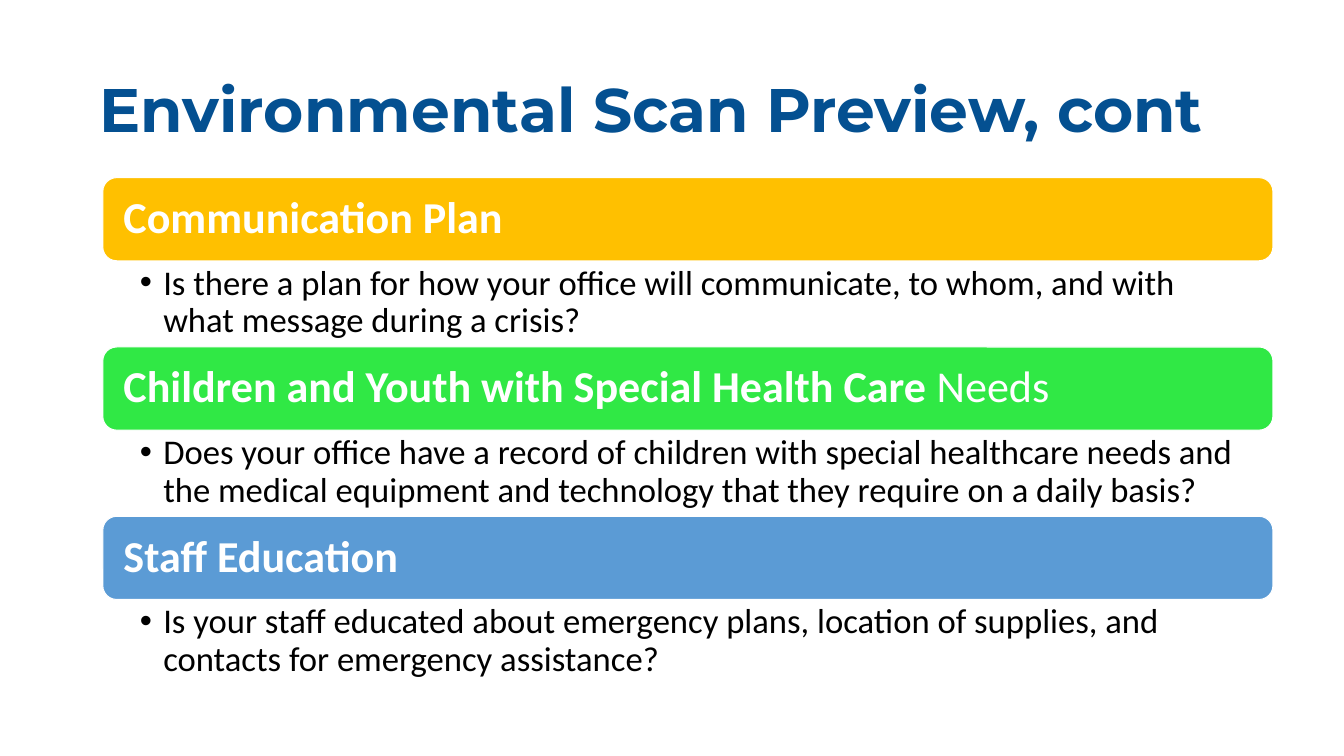
from lxml import etree
from pptx import Presentation
from pptx.dml.color import RGBColor
from pptx.enum.shapes import MSO_SHAPE
from pptx.enum.text import MSO_ANCHOR, PP_ALIGN
from pptx.oxml.ns import qn
from pptx.util import Pt

PX = 9144  # EMU per px, 100 px to the inch
ROUND = MSO_SHAPE.ROUNDED_RECTANGLE
MIDDLE, TOP = MSO_ANCHOR.MIDDLE, MSO_ANCHOR.TOP
LEFT = PP_ALIGN.LEFT

WHITE = RGBColor(0xFF, 0xFF, 0xFF)
BLACK = RGBColor(0x00, 0x00, 0x00)
NAVY = RGBColor(0x04, 0x50, 0x91)
GOLD = RGBColor(0xFF, 0xC0, 0x00)
GREEN = RGBColor(0x30, 0xE8, 0x45)
BLUE = RGBColor(0x5B, 0x9B, 0xD5)

EDGE, WIDE = 136, 1548
START, BAR_H, BODY_H = 235, 110, 114

TOPICS = [
    (GOLD, [("Communication Plan", True)],
     "Is there a plan for how your office will communicate, to whom, "
     "and with what message during a crisis?"),
    (GREEN, [("Children and Youth with Special Health Care ", True),
             ("Needs", False)],
     "Does your office have a record of children with special healthcare "
     "needs and the medical equipment and technology that they require "
     "on a daily basis?"),
    (BLUE, [("Staff Education", True)],
     "Is your staff educated about emergency plans, location of supplies, "
     "and contacts for emergency assistance?"),
]


class Deck:
    head_font = "Montserrat"
    body_font = "Calibri"

    def __init__(self, wide, high):
        self.prs = Presentation()
        self.prs.slide_width = wide * PX
        self.prs.slide_height = high * PX
        self.slide = self.prs.slides.add_slide(self.prs.slide_layouts[6])

    def label(self, shape, runs, font, size, color, pads, anchor):
        """Fill a shape with one paragraph; runs are (text, bold) pairs."""
        frame = shape.text_frame
        frame.word_wrap = True
        frame.vertical_anchor = anchor
        (frame.margin_left, frame.margin_top,
         frame.margin_right, frame.margin_bottom) = [pad * PX for pad in pads]
        para = frame.paragraphs[0]
        para.alignment = LEFT
        para.line_spacing = 0.9
        for text, bold in runs:
            run = para.add_run()
            run.text = text
            run.font.name = font
            run.font.size = Pt(size)
            run.font.bold = bold
            run.font.color.rgb = color
        return para

    def box(self, x, y, w, h):
        return self.slide.shapes.add_textbox(x * PX, y * PX, w * PX, h * PX)

    def title(self, text, x, y, w, h):
        self.label(self.box(x, y, w, h), [(text, True)], self.head_font,
                   58.5, NAVY, (10, 5, 10, 5), MIDDLE)

    def bar(self, runs, fill, x, y, w, h):
        shape = self.slide.shapes.add_shape(ROUND, x * PX, y * PX,
                                            w * PX, h * PX)
        shape.shadow.inherit = False
        shape.fill.solid()
        shape.fill.fore_color.rgb = fill
        shape.line.color.rgb = WHITE
        shape.line.width = Pt(1)
        self.label(shape, runs, self.body_font, 42, WHITE,
                   (22, 17, 22, 17), MIDDLE)

    def bullet(self, text, x, y, w, h):
        para = self.label(self.box(x, y, w, h), [(text, False)],
                          self.body_font, 33, BLACK, (49, 6, 33, 6), TOP)
        props = para._p.get_or_add_pPr()
        props.set("marL", str(31 * PX))
        props.set("indent", str(-31 * PX))
        etree.SubElement(props, qn("a:buFont"), typeface="Arial")
        etree.SubElement(props, qn("a:buChar"), char="•")


def main():
    deck = Deck(1778, 1000)
    deck.title("Environmental Scan Preview, cont", 122, 53, 1533, 193)
    for row, (fill, runs, text) in enumerate(TOPICS):
        top = START + row * (BAR_H + BODY_H)
        deck.bar(runs, fill, EDGE, top, WIDE, BAR_H)
        deck.bullet(text, EDGE, top + BAR_H, WIDE, BODY_H)
    deck.prs.save("out.pptx")


if __name__ == "__main__":
    main()
